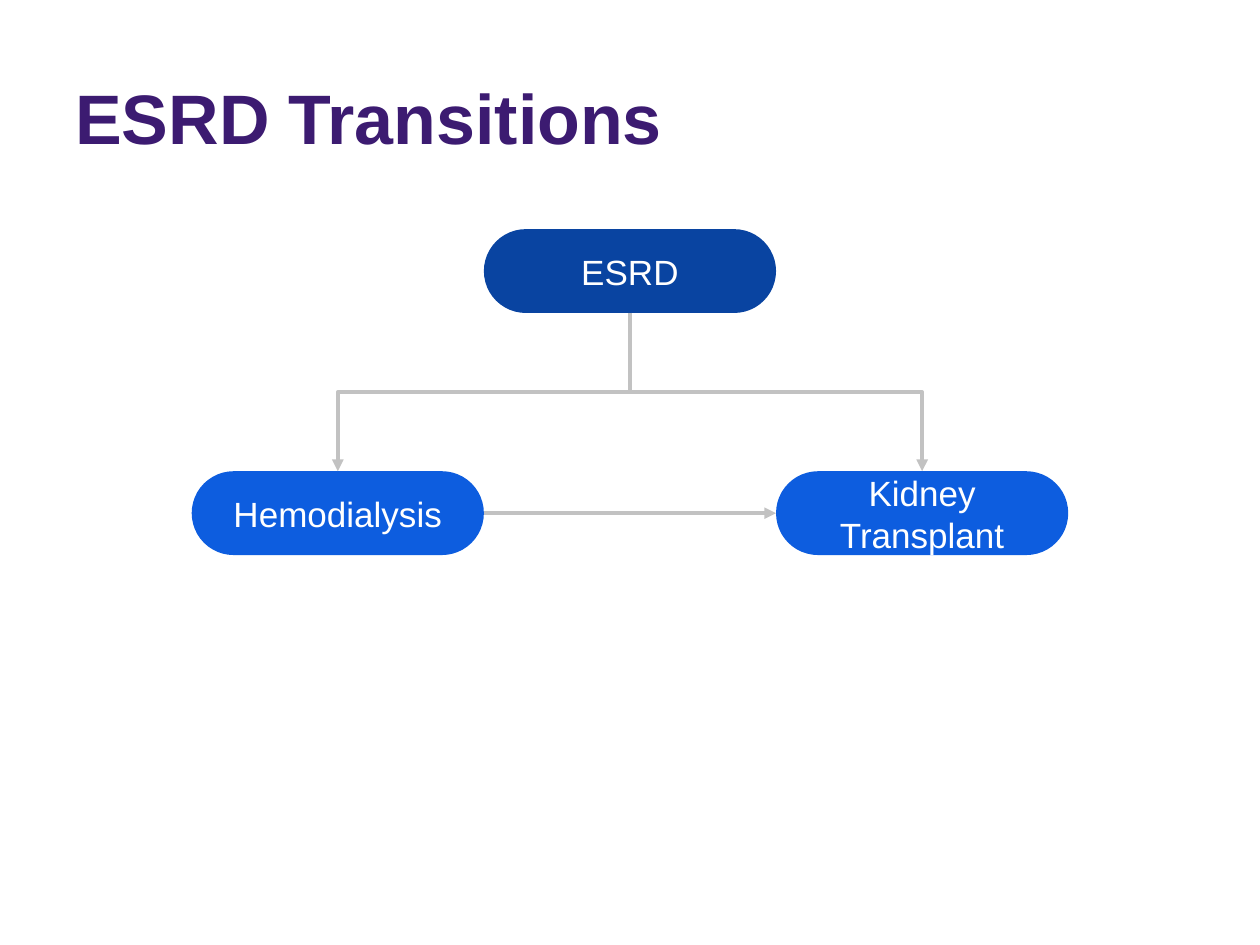
from dataclasses import dataclass

from lxml import etree
from pptx import Presentation
from pptx.dml.color import RGBColor
from pptx.enum.shapes import MSO_CONNECTOR, MSO_SHAPE
from pptx.enum.text import MSO_ANCHOR, PP_ALIGN
from pptx.oxml.ns import qn
from pptx.util import Cm, Pt

PILL = MSO_SHAPE.ROUNDED_RECTANGLE
ELBOW, STRAIGHT = MSO_CONNECTOR.ELBOW, MSO_CONNECTOR.STRAIGHT
LEFT, CENTER = PP_ALIGN.LEFT, PP_ALIGN.CENTER
MIDDLE = MSO_ANCHOR.MIDDLE
TOP_SIDE, LEFT_SIDE, BOTTOM_SIDE, RIGHT_SIDE = range(4)

WIDE, HIGH = 5.89, 1.69  # node size
MID = 12.7  # slide centre
GRAY = "C2C2C2"


@dataclass
class Node:
    text: str
    col: int  # steps of one node width from the centre
    top: float
    fill: str


ROOT = Node("ESRD", 0, 4.62, "0944A1")
DIAL = Node("Hemodialysis", -1, 9.5, "0D5DDF")
GRAFT = Node("Kidney Transplant", 1, 9.5, "0D5DDF")


def color(code: str) -> RGBColor:
    return RGBColor.from_string(code)


def write(shape, text: str, *, size: float, ink: str, bold: bool = False,
          align=LEFT, pad: float = 0.25, after: float = 0) -> None:
    frame = shape.text_frame
    frame.word_wrap = True
    frame.vertical_anchor = MIDDLE
    frame.margin_left = frame.margin_right = Cm(0.25)
    frame.margin_top = frame.margin_bottom = Cm(pad)
    para = frame.paragraphs[0]
    para.alignment = align
    para.space_after = Pt(after)
    run = para.add_run()
    run.text = text
    run.font.name = "Arial"
    run.font.size = Pt(size)
    run.font.bold = bold
    run.font.color.rgb = color(ink)


def draw_node(slide, node: Node):
    left = MID + node.col * WIDE - WIDE / 2
    pill = slide.shapes.add_shape(PILL, Cm(left), Cm(node.top), Cm(WIDE), Cm(HIGH))
    pill.adjustments[0] = 0.5
    pill.shadow.inherit = False
    pill.fill.solid()
    pill.fill.fore_color.rgb = color(node.fill)
    pill.line.fill.background()
    write(pill, node.text, size=20, ink="FFFFFF", align=CENTER)
    return pill


def draw_arrow(slide, kind, start, out: int, end, into: int):
    arrow = slide.shapes.add_connector(kind, 0, 0, 0, 0)
    arrow.begin_connect(start, out)
    arrow.end_connect(end, into)
    arrow.line.color.rgb = color(GRAY)
    arrow.line.width = Pt(2.25)
    etree.SubElement(arrow.line._get_or_add_ln(), qn("a:tailEnd"), type="triangle")
    etree.SubElement(arrow._element.spPr, qn("a:effectLst"))
    return arrow


def draw_branch(slide, start, end) -> None:
    """Elbow that leaves downward: turn its frame a quarter about its centre."""
    arrow = draw_arrow(slide, ELBOW, start, BOTTOM_SIDE, end, TOP_SIDE)
    x1, y1, x2, y2 = arrow.begin_x, arrow.begin_y, arrow.end_x, arrow.end_y
    wide, high = y2 - y1, abs(x2 - x1)
    arrow.left, arrow.top = (x1 + x2 - wide) // 2, (y1 + y2 - high) // 2
    arrow.width, arrow.height = wide, high
    frame = arrow._element.spPr.find(qn("a:xfrm"))
    frame.attrib.clear()
    if x2 > x1:
        frame.set("rot", str(270 * 60000))
        frame.set("flipH", "1")
    else:
        frame.set("rot", str(90 * 60000))


def main() -> None:
    deck = Presentation()
    deck.slide_width, deck.slide_height = Cm(25.4), Cm(19.05)
    slide = deck.slides.add_slide(deck.slide_layouts[6])

    # Title
    title = slide.shapes.add_textbox(Cm(1.27), Cm(0.76), Cm(22.86), Cm(3.18))
    write(title, "ESRD Transitions", size=40, ink="3C1B71", bold=True,
          pad=0.13, after=12)

    # Nodes
    root, graft, dial = [draw_node(slide, node) for node in (ROOT, GRAFT, DIAL)]

    # Arrows
    for child in (graft, dial):
        draw_branch(slide, root, child)
    draw_arrow(slide, STRAIGHT, dial, RIGHT_SIDE, graft, LEFT_SIDE)

    deck.save("out.pptx")


if __name__ == "__main__":
    main()
